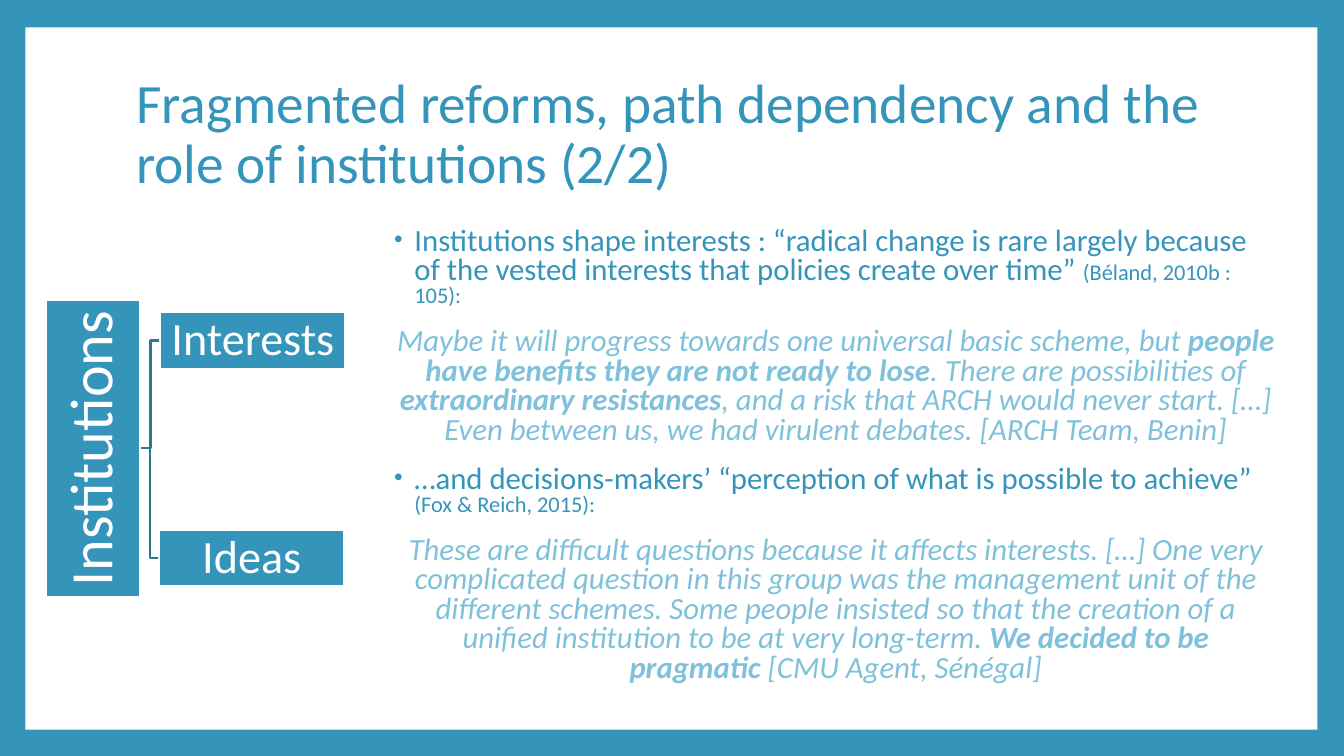
from lxml import etree
from pptx import Presentation
from pptx.dml.color import RGBColor
from pptx.enum import shapes, text
from pptx.oxml import ns
from pptx.util import Cm, Pt

BLUE = RGBColor(0x34, 0x94, 0xBA)
DARK_BLUE = RGBColor(0x2A, 0x77, 0x95)
LIGHT_BLUE = RGBColor(0x7F, 0xC1, 0xDB)
WHITE = RGBColor(0xFF, 0xFF, 0xFF)
FONT = "Calibri"

TITLE = "Fragmented reforms, path dependency and the role of institutions (2/2)"

# Points are (statement, reference); quotes alternate plain and bold runs.
ARGUMENTS = [
    (("Institutions shape interests : “radical change is rare largely because of "
      "the vested interests that policies create over time” ",
      "(Béland, 2010b : 105):"),
     ("Maybe it will progress towards one universal basic scheme, but ",
      "people have benefits they are not ready to lose",
      ". There are possibilities of ",
      "extraordinary resistances",
      ", and a risk that ARCH would never start. […] Even between us, we had "
      "virulent debates. [ARCH Team, Benin]")),
    (("…and decisions-makers’ “perception of what is possible to achieve” ",
      "(Fox & Reich, 2015):"),
     ("These are difficult questions because it affects interests. […] One very "
      "complicated question in this group was the management unit of the different "
      "schemes. Some people insisted so that the creation of a unified institution "
      "to be at very long-term. ",
      "We decided to be pragmatic ",
      "[CMU Agent, Sénégal]")),
]


def place(sp, left, top, width, height):
    sp.left, sp.top, sp.width, sp.height = Cm(left), Cm(top), Cm(width), Cm(height)


def format_run(r, size, color, bold=False, italic=False):
    r.font.name = FONT
    r.font.size = Pt(size)
    r.font.color.rgb = color
    r.font.bold = bold
    r.font.italic = italic


def add_run(p, words, *style, **options):
    r = p.add_run()
    r.text = words
    format_run(r, *style, **options)


def set_bullet(p, indent, hanging, char=None):
    """Set the indents in cm, and a bullet if a character is given."""
    pPr = p._p.get_or_add_pPr()
    pPr.set("marL", str(Cm(indent)))
    pPr.set("indent", str(-Cm(hanging)))
    if char is None:
        etree.SubElement(pPr, ns.qn("a:buNone"))
        return
    color = etree.SubElement(pPr, ns.qn("a:buClr"))
    etree.SubElement(color, ns.qn("a:srgbClr"), val=str(BLUE))
    etree.SubElement(pPr, ns.qn("a:buSzPct"), val="80000")
    etree.SubElement(pPr, ns.qn("a:buFont"), typeface="Arial")
    etree.SubElement(pPr, ns.qn("a:buChar"), char=char)


def add_rectangle(s, box, fill):
    sp = s.shapes.add_shape(shapes.MSO_SHAPE.RECTANGLE, *map(Cm, box))
    sp.shadow.inherit = False
    sp.fill.solid()
    sp.fill.fore_color.rgb = fill
    sp.line.fill.background()
    return sp


def add_frame(s):
    """Leave a blue border round a white panel behind everything else."""
    s.background.fill.solid()
    s.background.fill.fore_color.rgb = BLUE
    panel = add_rectangle(s, (0.64, 0.69, 32.56, 17.7), WHITE)
    s.shapes._spTree.insert(2, panel._element)


def fill_title(sp):
    place(sp, 3.18, 1.7, 27.43, 3.43)
    tf = sp.text_frame
    tf.text = TITLE
    tf.auto_size = text.MSO_AUTO_SIZE.NONE
    tf.vertical_anchor = text.MSO_ANCHOR.MIDDLE
    p = tf.paragraphs[0]
    p.alignment = text.PP_ALIGN.LEFT
    p.line_spacing = 0.9
    format_run(p.runs[0], 39.6, BLUE)


def fill_body(sp):
    place(sp, 9.55, 5.61, 22.89, 12.32)
    tf = sp.text_frame
    tf.auto_size = text.MSO_AUTO_SIZE.NONE
    tf.vertical_anchor = text.MSO_ANCHOR.TOP
    for _ in range(2 * len(ARGUMENTS) - 1):
        tf.add_paragraph()
    for p in tf.paragraphs:
        p.line_spacing = 0.8
        p.space_before = Pt(14)
    points, quotes = tf.paragraphs[::2], tf.paragraphs[1::2]
    for point, quote, (statement, parts) in zip(points, quotes, ARGUMENTS):
        set_bullet(point, 0.64, 0.51, "•")
        for words, size in zip(statement, (22, 16)):
            add_run(point, words, size, BLUE)
        quote.alignment = text.PP_ALIGN.CENTER
        set_bullet(quote, 0.13, 0)
        for i, words in enumerate(parts):
            add_run(quote, words, 22, LIGHT_BLUE, bold=i % 2 == 1, italic=True)


def add_node(s, label, box, size, rotation=0):
    sp = add_rectangle(s, box, BLUE)
    sp.rotation = rotation
    sp.line.color.rgb = WHITE
    sp.line.width = Pt(1.5)
    tf = sp.text_frame
    tf.text = label
    tf.word_wrap = True
    tf.vertical_anchor = text.MSO_ANCHOR.MIDDLE
    tf.margin_left = tf.margin_right = tf.margin_top = tf.margin_bottom = Cm(0.06)
    p = tf.paragraphs[0]
    p.alignment = text.PP_ALIGN.CENTER
    p.line_spacing = 0.9
    format_run(p.runs[0], size, WHITE)


def add_branch(s, start, end):
    """Draw an elbow line that turns halfway between two points in cm."""
    (x1, y1), (x2, y2) = start, end
    middle = (x1 + x2) / 2
    builder = s.shapes.build_freeform(Cm(x1), Cm(y1))
    corners = [(middle, y1), (middle, y2), (x2, y2)]
    builder.add_line_segments([(Cm(x), Cm(y)) for x, y in corners], close=False)
    sp = builder.convert_to_shape()
    sp.shadow.inherit = False
    sp.fill.background()
    sp.line.color.rgb = DARK_BLUE
    sp.line.width = Pt(1.5)


def add_hierarchy(s):
    width, height = 4.67, 1.42
    for label, left, top in (("Ideas", 4.01, 13.36), ("Interests", 4.04, 7.87)):
        add_branch(s, (3.55, 11.3), (left, top + height / 2))
        add_node(s, label, (left, top, width, height), 33)
    add_node(s, "Institutions", (-1.4, 10.11, 7.49, 2.39), 43, rotation=270)


def main():
    prs = Presentation()
    prs.slide_width, prs.slide_height = Cm(33.87), Cm(19.05)
    s = prs.slides.add_slide(prs.slide_layouts[1])
    add_frame(s)
    fill_title(s.shapes.title)
    fill_body(s.placeholders[1])
    add_hierarchy(s)
    prs.save("out.pptx")


if __name__ == "__main__":
    main()
